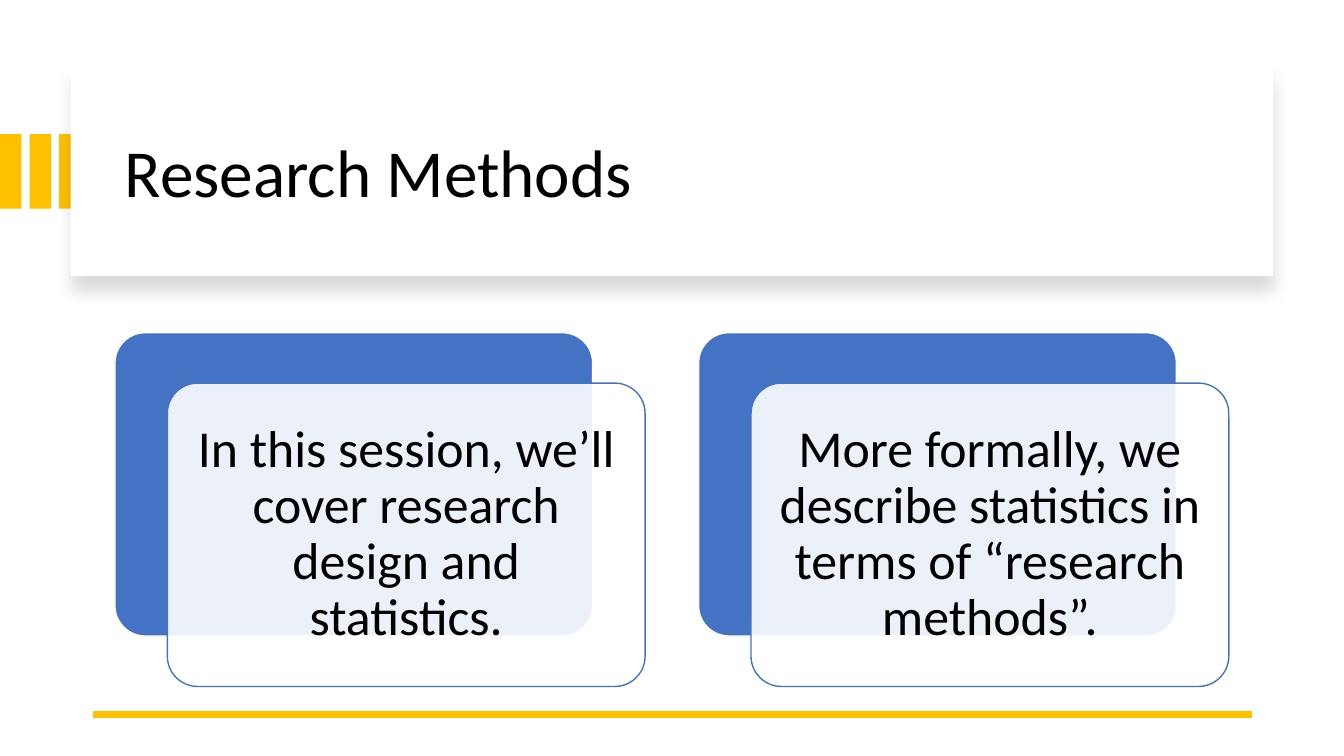
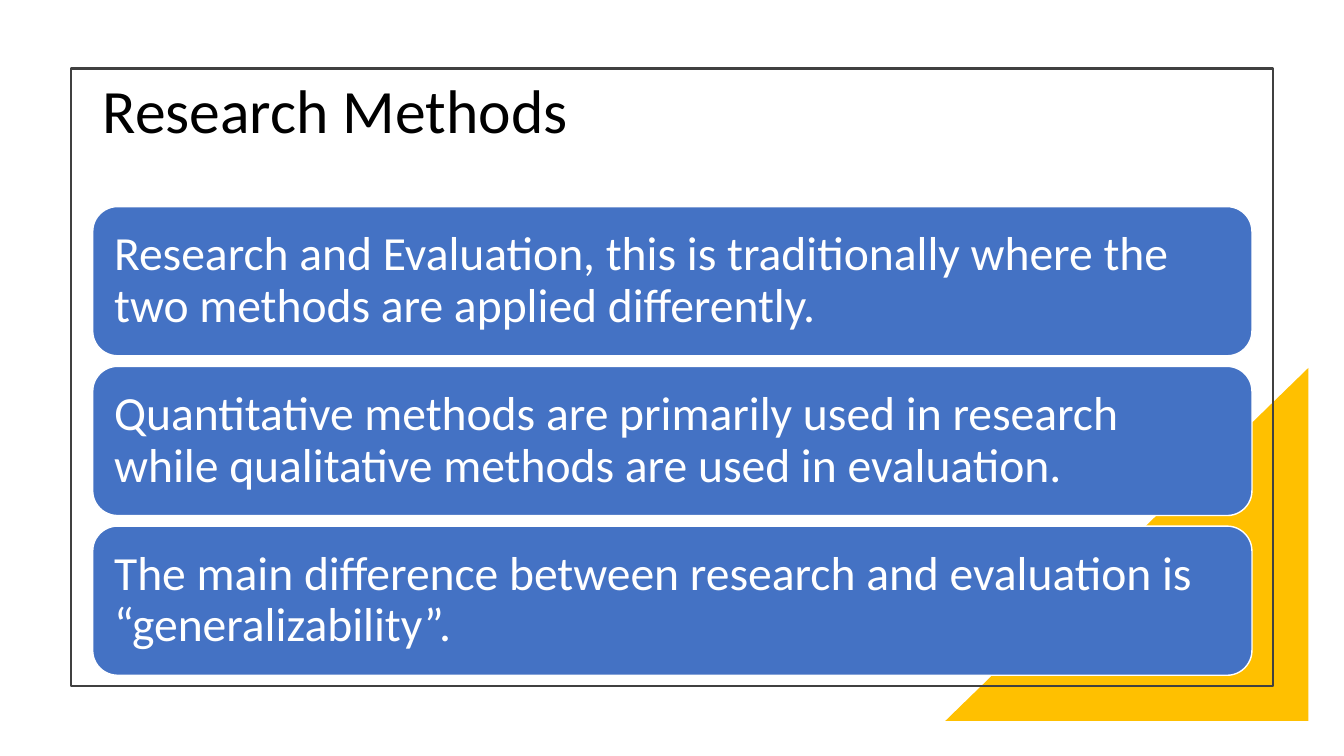
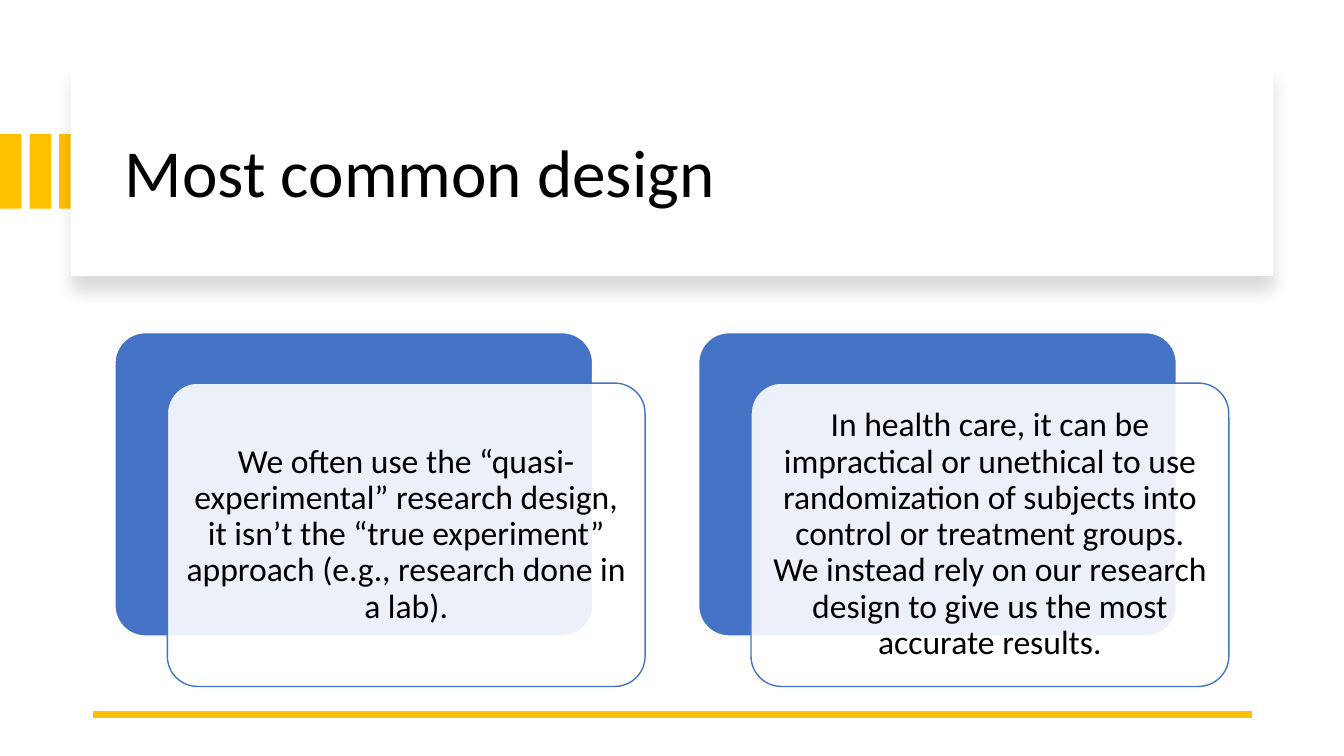
import dataclasses

import lxml.etree
import pptx
import pptx.dml.color
import pptx.enum.shapes
import pptx.enum.text
import pptx.oxml
import pptx.oxml.ns
import pptx.util

SHAPE = pptx.enum.shapes.MSO_SHAPE
ALIGN = pptx.enum.text.PP_ALIGN
qn = pptx.oxml.ns.qn


@dataclasses.dataclass(frozen=True)
class Theme:
    font: str = "Calibri"
    ink: str = "000000"
    paper: str = "FFFFFF"
    blue: str = "4472C4"
    gold: str = "FFC000"
    frame: str = "404040"
    panel_title: int = 48
    frame_title: int = 44
    row_text: int = 34


T = Theme()
prs = pptx.Presentation()
prs.slide_width = pptx.util.Inches(13.33)
prs.slide_height = pptx.util.Inches(7.5)

# All positions are percentages of the slide's width and height.
COL = prs.slide_width / 100
ROW = prs.slide_height / 100
PANEL_X, PANEL_W = 5.25, 89.5
BODY_X, BODY_W = 6.9, 86.25
CARD_X = 8.55


def add(s, kind, at, fill=None, line=None, width=1):
    """Add a preset shape, or a text box if kind is None, at (x, y, w, h) percent."""
    x, y, w, h = at
    emu = [round(v) for v in (x * COL, y * ROW, w * COL, h * ROW)]
    sp = s.shapes.add_shape(kind, *emu) if kind else s.shapes.add_textbox(*emu)
    sp.shadow.inherit = False
    for paint, color in ((sp.fill, fill), (sp.line.fill, line)):
        if color:
            paint.solid()
            paint.fore_color.rgb = pptx.dml.color.RGBColor.from_string(color)
        else:
            paint.background()
    if line:
        sp.line.width = pptx.util.Pt(width)
    return sp


def write(sp, text, size, color, align=ALIGN.LEFT, inset=None):
    tf = sp.text_frame
    tf.word_wrap = True
    tf.vertical_anchor = pptx.enum.text.MSO_ANCHOR.MIDDLE
    if inset:
        tf.margin_left = tf.margin_right = pptx.util.Inches(inset)
        tf.margin_top = tf.margin_bottom = pptx.util.Inches(inset)
    p = tf.paragraphs[0]
    p.text = text
    p.alignment = align
    p.line_spacing = 0.9
    p.font.name = T.font
    p.font.size = pptx.util.Pt(size)
    p.font.color.rgb = pptx.dml.color.RGBColor.from_string(color)


blank = prs.slide_layouts[6]
intro, methods, design = [prs.slides.add_slide(blank) for _ in range(3)]

# Slides with a raised title panel and two cards
card_slides = [
    (intro, "Research Methods", 37, 0.15, [
        "In this session, we’ll cover research design and statistics.",
        "More formally, we describe statistics in terms of “research methods”.",
    ]),
    (design, "Most common design", 24, 0.1, [
        "We often use the “quasi-experimental” research design, it isn’t the "
        "“true experiment” approach (e.g., research done in a lab).",
        "In health care, it can be impractical or unethical to use randomization "
        "of subjects into control or treatment groups. We instead rely on our "
        "research design to give us the most accurate results.",
    ]),
]
for s, title, size, inset, texts in card_slides:
    for i in range(3):
        add(s, SHAPE.RECTANGLE, (i * 2.2, 17.73, 1.6, 9.87), T.gold)

    panel = add(s, SHAPE.RECTANGLE, (PANEL_X, 8.93, PANEL_W, 27.6), T.paper)
    effects = panel._element.spPr.find(qn("a:effectLst"))
    shadow = lxml.etree.SubElement(
        effects, qn("a:outerShdw"), blurRad=str(pptx.util.Pt(11)),
        dist=str(pptx.util.Pt(10)), dir="5400000", algn="t", rotWithShape="0")
    tint = lxml.etree.SubElement(shadow, qn("a:srgbClr"), val=T.ink)
    lxml.etree.SubElement(tint, qn("a:alpha"), val="15000")
    write(add(s, None, (CARD_X, 11.87, 83.5, 22.67)), title, T.panel_title, T.ink)

    y = round(94.53 * ROW)
    rule = s.shapes.add_connector(
        pptx.enum.shapes.MSO_CONNECTOR.STRAIGHT,
        round((BODY_X + BODY_W) * COL), y, round(BODY_X * COL), y)
    rule.line.color.rgb = pptx.dml.color.RGBColor.from_string(T.gold)
    rule.line.width = pptx.util.Pt(4.5)
    lxml.etree.SubElement(rule._element.spPr, qn("a:effectLst"))

    for i, text in enumerate(texts):
        x, y, w, h = CARD_X + i * 43.43, 44, 35.55, 40.13
        back = add(s, SHAPE.ROUNDED_RECTANGLE, (x, y, w, h), T.blue, T.paper)
        card = add(s, SHAPE.ROUNDED_RECTANGLE, (x + 3.9, y + 6.67, w, h), T.paper, T.blue)
        back.adjustments[0] = card.adjustments[0] = 0.1
        fill = card._element.spPr.find(qn("a:solidFill")).find(qn("a:srgbClr"))
        lxml.etree.SubElement(fill, qn("a:alpha"), val="90000")
        write(card, text, size, T.ink, ALIGN.CENTER, inset)

# Framed slide with three rows
corner = add(methods, SHAPE.RIGHT_TRIANGLE, (70.35, 48.67, 27, 46.67), T.gold)
corner._element.spPr.find(qn("a:xfrm")).set("flipH", "1")
add(methods, SHAPE.RECTANGLE, (PANEL_X, 9.07, PANEL_W, 81.73), line=T.frame, width=1.5)
write(add(methods, None, (BODY_X, 5.33, BODY_W, 19.33)),
      "Research Methods", T.frame_title, T.ink)
rows = [
    "Research and Evaluation, this is traditionally where the two methods are "
    "applied differently.",
    "Quantitative methods are primarily used in research while qualitative "
    "methods are used in evaluation.",
    "The main difference between research and evaluation is “generalizability”.",
]
for i, text in enumerate(rows):
    row = add(methods, SHAPE.ROUNDED_RECTANGLE,
              (BODY_X, 27.33 + i * 21.13, BODY_W, 19.73), T.blue, T.paper)
    write(row, text, T.row_text, T.paper, inset=0.14)

prs.save("out.pptx")
